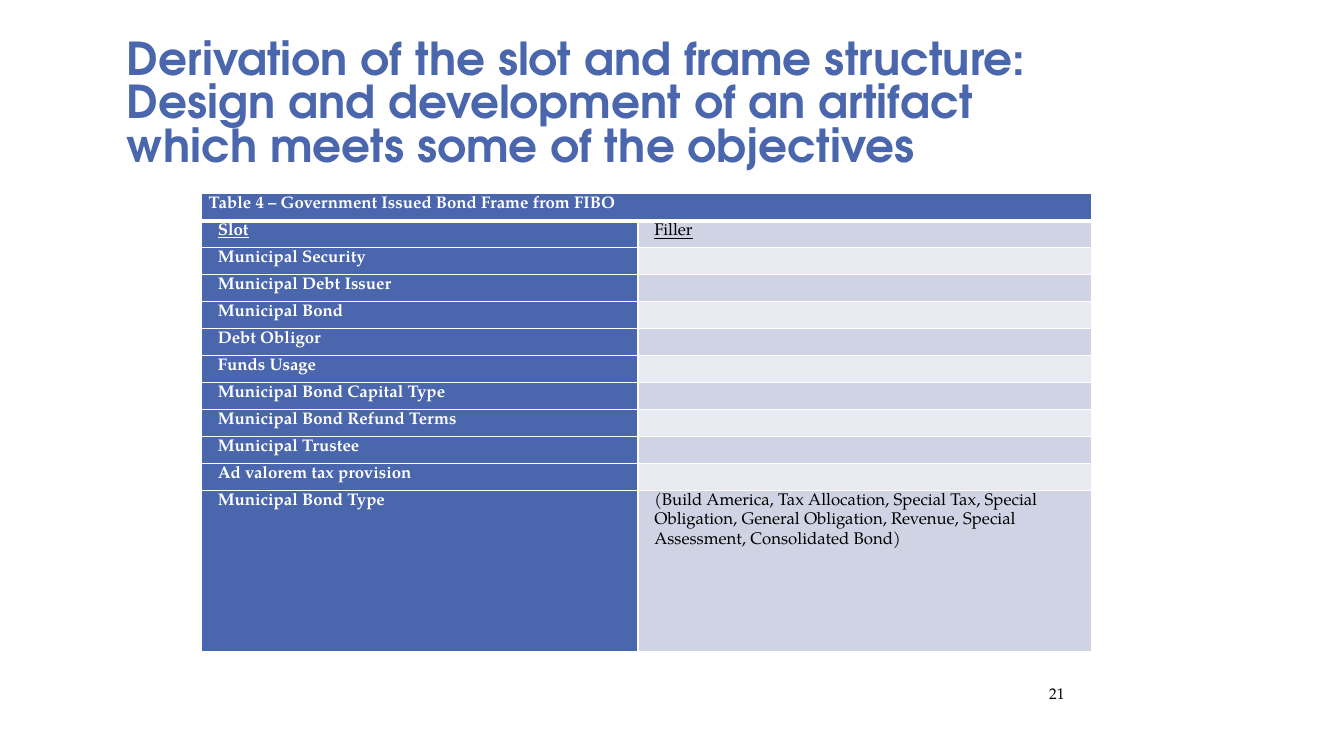
from lxml import etree
from pptx import Presentation
from pptx.dml.color import RGBColor
from pptx.enum.text import MSO_ANCHOR, PP_ALIGN
from pptx.oxml.ns import qn
from pptx.util import Cm, Pt

BOTTOM, MIDDLE = MSO_ANCHOR.BOTTOM, MSO_ANCHOR.MIDDLE
LEFT, RIGHT = PP_ALIGN.LEFT, PP_ALIGN.RIGHT

CAPTION = "Table 4 – Government Issued Bond Frame from FIBO"
BOND_TYPES = ("(Build America, Tax Allocation, Special Tax, Special Obligation, "
              "General Obligation, Revenue, Special Assessment, Consolidated Bond)")
FRAME = [
    ("Slot", "Filler"),
    ("Municipal Security", ""),
    ("Municipal Debt Issuer", ""),
    ("Municipal Bond", ""),
    ("Debt Obligor", ""),
    ("Funds Usage", ""),
    ("Municipal Bond Capital Type", ""),
    ("Municipal Bond Refund Terms", ""),
    ("Municipal Trustee", ""),
    ("Ad valorem tax provision", ""),
    ("Municipal Bond Type", BOND_TYPES),
]


def rgb(value):
    return RGBColor.from_string(value)


class SlideBuilder:
    HEADING, BODY = "TeX Gyre Adventor", "TeX Gyre Pagella"
    BLUE, WHITE, BLACK = "4A66AC", "FFFFFF", "000000"
    BANDS = ("D0D3E3", "E9EAF1")
    CELL_SIZE = 12

    def __init__(self, s):
        self.s = s

    def run(self, p, text, size, color, font=BODY, bold=False, underline=False):
        r = p.add_run()
        r.text = text
        f = r.font
        f.name, f.size, f.bold, f.underline = font, Pt(size), bold, underline
        f.color.rgb = rgb(color)

    def text(self, box, lines, size, color, font=BODY, bold=False,
             anchor=MIDDLE, align=LEFT, spacing=1.0):
        tf = self.s.shapes.add_textbox(*map(Cm, box)).text_frame
        tf.word_wrap = True
        tf.vertical_anchor = anchor
        p = tf.paragraphs[0]
        p.alignment, p.line_spacing = align, spacing
        for i, line in enumerate(lines):
            if i:
                p.add_line_break()
            self.run(p, line, size, color, font, bold)

    def borders(self, cell, top=1, bottom=1):
        tcPr = cell._tc.get_or_add_tcPr()
        for side, width in (("L", 1), ("R", 1), ("T", top), ("B", bottom)):
            ln = etree.SubElement(tcPr, qn(f"a:ln{side}"), w=str(Pt(width)))
            fill = etree.SubElement(ln, qn("a:solidFill"))
            etree.SubElement(fill, qn("a:srgbClr"), val=self.WHITE)

    def cell(self, cell, text, fill, color, indent=0.23, top=1, bottom=1, **style):
        self.borders(cell, top, bottom)
        cell.fill.solid()
        cell.fill.fore_color.rgb = rgb(fill)
        cell.margin_left = cell.margin_right = Cm(0.18)
        cell.margin_top = cell.margin_bottom = 0
        p = cell.text_frame.paragraphs[0]
        p.line_spacing = 1.15
        pPr = p._p.get_or_add_pPr()
        pPr.set("marL", str(Cm(indent)))
        pPr.set("indent", "0")
        if text:
            self.run(p, text, self.CELL_SIZE, color, **style)
        else:
            # Keeps an empty row as low as a row with text
            etree.SubElement(p._p, qn("a:endParaRPr"), sz=str(self.CELL_SIZE * 100))

    def frame_table(self, box, widths, row_height, last_height, caption, rows):
        table = self.s.shapes.add_table(len(rows) + 1, 2, *map(Cm, box)).table
        for column, width in zip(table.columns, widths):
            column.width = Cm(width)
        for row in table.rows:
            row.height = Cm(row_height)
        table.rows[len(rows)].height = Cm(last_height)

        table.cell(0, 0).merge(table.cell(0, 1))
        self.cell(table.cell(0, 0), caption, self.BLUE, self.WHITE,
                  indent=0, bottom=3, bold=True)
        for i, (slot, filler) in enumerate(rows):
            header = i == 0
            top = 3 if header else 1
            self.cell(table.cell(i + 1, 0), slot, self.BLUE, self.WHITE,
                      top=top, bold=True, underline=header)
            self.cell(table.cell(i + 1, 1), filler, self.BANDS[i % 2], self.BLACK,
                      top=top, underline=header)


def main():
    prs = Presentation()
    prs.slide_width, prs.slide_height = Cm(33.87), Cm(19.05)
    b = SlideBuilder(prs.slides.add_slide(prs.slide_layouts[6]))
    b.text((2.95, 1.47, 24.13, 2.97),
           ("Derivation of the slot and frame structure:",
            "Design and development of an artifact which meets some of the objectives"),
           32.4, b.BLUE, b.HEADING, bold=True, anchor=BOTTOM, spacing=0.8)
    b.frame_table((5.08, 4.88, 22.43, 11.53), (11, 11.43), 0.68, 4.05, CAPTION, FRAME)
    b.text((23.7, 17.09, 3.38, 0.76), ("21",), 11, b.BLACK, align=RIGHT)
    prs.save("out.pptx")


if __name__ == "__main__":
    main()
